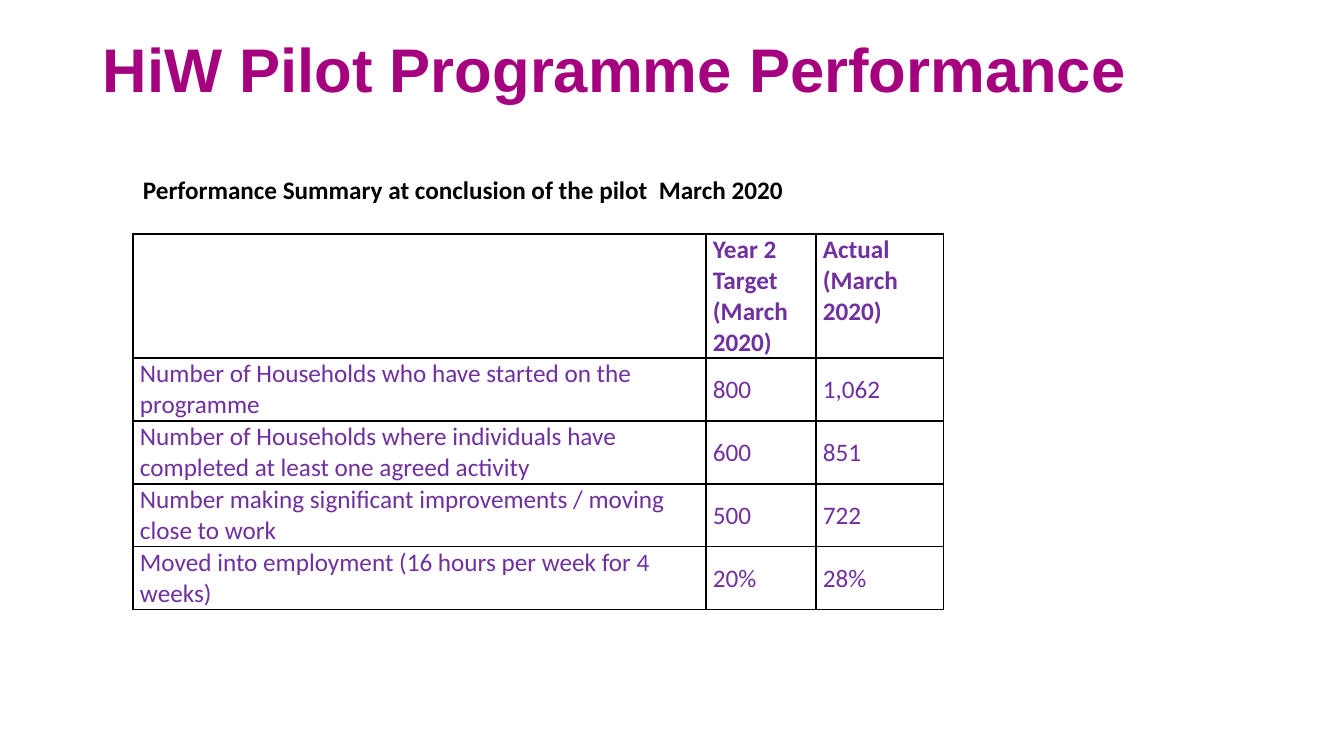
import pptx
import pptx.dml.color
import pptx.enum.text
import pptx.oxml
import pptx.oxml.ns
import pptx.util

PX = 9144000 / 1008  # EMU per px
RGBColor = pptx.dml.color.RGBColor
MAGENTA = RGBColor(0xA5, 0x01, 0x7F)
PURPLE = RGBColor(0x70, 0x30, 0xA0)
BLACK = RGBColor(0, 0, 0)
MIDDLE = pptx.enum.text.MSO_ANCHOR.MIDDLE
TOP = pptx.enum.text.MSO_ANCHOR.TOP

TITLE_FONT = {"name": "Arial", "size": pptx.util.Pt(44), "bold": True}
HEAD_FONT = {"name": "Calibri", "size": pptx.util.Pt(18), "bold": True}
BODY_FONT = {**HEAD_FONT, "bold": False}
CELL_MARGINS = {"margin_left": 7, "margin_right": 7, "margin_top": 1, "margin_bottom": 0}

COLUMN_WIDTHS = [573, 110, 128]
ROW_HEIGHTS = [124] + [63] * 4
RESULTS = [
    ["", "Year 2 Target (March 2020)", "Actual\n(March 2020)"],
    ["Number of Households who have started on the programme", "800", "1,062"],
    ["Number of Households where individuals have completed at least one agreed activity",
     "600", "851"],
    ["Number making significant improvements / moving close to work", "500", "722"],
    ["Moved into employment (16 hours per week for 4 weeks)", "20%", "28%"],
]


def px(n):
    return pptx.util.Emu(round(n * PX))


def write(tf, text, font, color):
    """Fill a text frame, one paragraph per line of text."""
    tf.text = text
    for p in tf.paragraphs:
        for target in [p.font, *(r.font for r in p.runs)]:
            for name, value in font.items():
                setattr(target, name, value)
            target.color.rgb = color


def add_text(s, box, text, font, color, **layout):
    tf = s.shapes.add_textbox(*map(px, box)).text_frame
    for name, value in layout.items():
        setattr(tf, name, value)
    write(tf, text, font, color)
    return tf


def add_borders(cell):
    tcPr = cell._tc.get_or_add_tcPr()
    ns = pptx.oxml.ns.nsdecls("a")
    for i, side in enumerate(["lnL", "lnR", "lnT", "lnB"]):
        tcPr.insert(i, pptx.oxml.parse_xml(
            f'<a:{side} {ns} w="12700"><a:solidFill><a:srgbClr val="{BLACK}"/>'
            f'</a:solidFill></a:{side}>'))


def add_results_table(s, left, top):
    table = s.shapes.add_table(
        len(RESULTS), len(COLUMN_WIDTHS), px(left), px(top),
        px(sum(COLUMN_WIDTHS)), px(sum(ROW_HEIGHTS))).table
    table.first_row = table.horz_banding = False
    for column, width in zip(table.columns, COLUMN_WIDTHS):
        column.width = px(width)
    for row, height in zip(table.rows, ROW_HEIGHTS):
        row.height = px(height)
    for i, row in enumerate(RESULTS):
        for j, text in enumerate(row):
            cell = table.cell(i, j)
            for name, value in CELL_MARGINS.items():
                setattr(cell, name, px(value))
            cell.vertical_anchor = MIDDLE if i and j else TOP
            cell.fill.background()
            add_borders(cell)
            write(cell.text_frame, text, BODY_FONT if i else HEAD_FONT, PURPLE)


def main():
    prs = pptx.Presentation()
    prs.slide_width, prs.slide_height = px(1344), px(756)
    s = prs.slides.add_slide(prs.slide_layouts[6])
    title = add_text(s, (93, 0, 1159, 146), "HiW Pilot Programme Performance",
                     TITLE_FONT, MAGENTA, word_wrap=True, vertical_anchor=MIDDLE)
    title.paragraphs[0].line_spacing = 0.9
    add_results_table(s, 133, 234)
    add_text(s, (133, 169, 666, 40),
             "Performance Summary at conclusion of the pilot  March 2020",
             HEAD_FONT, BLACK, word_wrap=False,
             auto_size=pptx.enum.text.MSO_AUTO_SIZE.SHAPE_TO_FIT_TEXT)
    prs.save("out.pptx")


if __name__ == "__main__":
    main()
